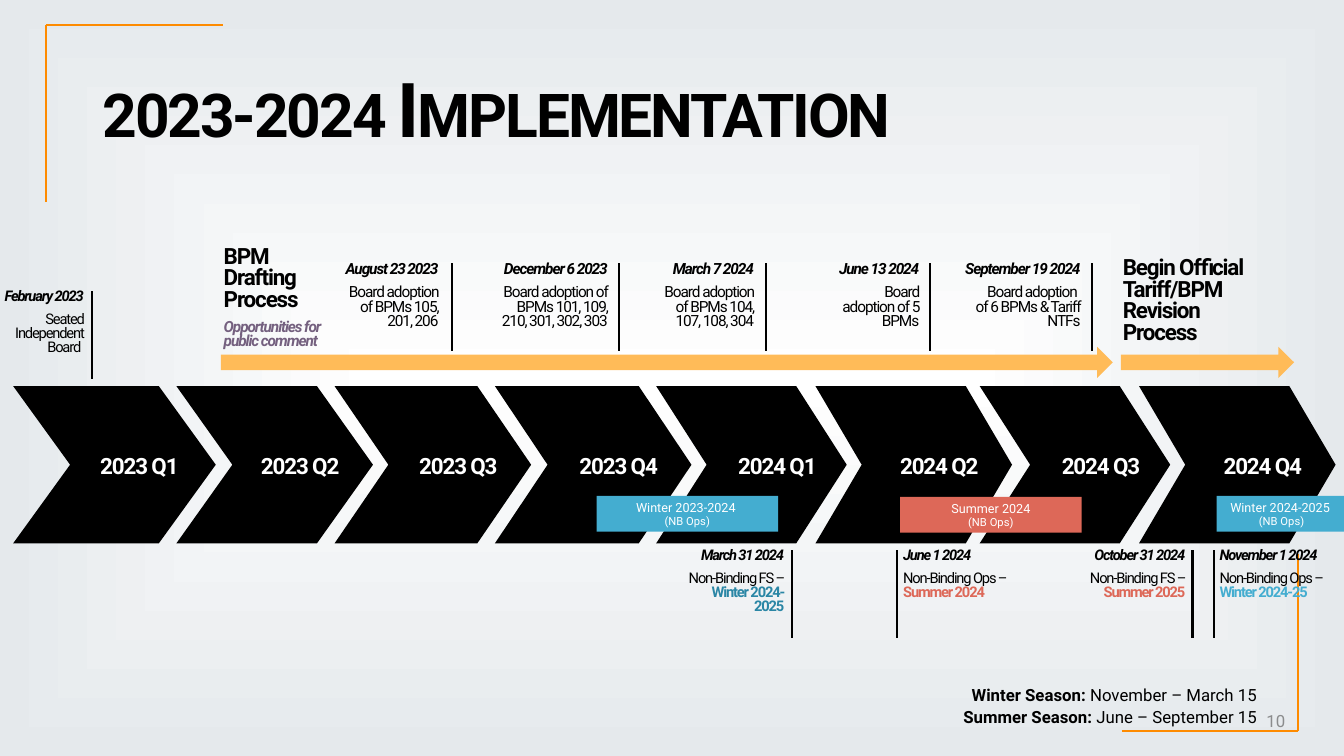
from dataclasses import dataclass, replace

from lxml.etree import SubElement
from pptx import Presentation
from pptx.dml.color import RGBColor
from pptx.enum.shapes import MSO_CONNECTOR, MSO_SHAPE
from pptx.enum.text import MSO_ANCHOR, PP_ALIGN
from pptx.oxml.ns import qn
from pptx.shapes.autoshape import Shape
from pptx.slide import Slide
from pptx.text.text import TextFrame
from pptx.util import Pt

INK = {
    "black": "000000", "white": "FFFFFF", "edge": "E5E9EC", "frame": "FE8B00",
    "amber": "FFBB58", "red": "DD6858", "blue": "44ADD0", "teal": "2A86A5",
    "plum": "74607F", "grey": "8B8C8D",
}
LEFT, RIGHT, MID = PP_ALIGN.LEFT, PP_ALIGN.RIGHT, PP_ALIGN.CENTER


@dataclass(frozen=True)
class Run:
    text: str
    size: float
    ink: str = "black"
    bold: bool = False
    slant: bool = False
    track: float = 0
    small: bool = False


@dataclass(frozen=True)
class Box:
    x: float
    y: float
    w: float
    h: float


@dataclass(frozen=True)
class Style:
    align: PP_ALIGN = LEFT
    lead: float = 0.8
    gap: float = 6
    inset: float = 2.16
    anchor: MSO_ANCHOR = MSO_ANCHOR.TOP


@dataclass(frozen=True)
class Quarter:
    name: str
    x: float
    w: float
    notch: float


@dataclass(frozen=True)
class Event:
    """A dated note beside an upright bar."""
    x: float
    y: float
    w: float
    bar: float
    date: str
    note: str
    size: float = 10.5
    align: PP_ALIGN = RIGHT
    season: str = ""
    ink: str = "black"


@dataclass(frozen=True)
class Season:
    name: str
    x: float
    y: float
    w: float
    ink: str


HEAD = Run("", 16, bold=True, track=-0.8)
UPPER, LOWER = 185.2, 390.2
CHEVRON_TOP, CHEVRON_H, LABEL_H = 275.8, 112.3, 24.5

QUARTERS = [
    Quarter("2023 Q1", 9.4, 144.7, 0.362),
    Quarter("2023 Q2", 126, 140.4, 0.356),
    Quarter("2023 Q3", 239, 140.4, 0.342),
    Quarter("2023 Q4", 353.5, 140.4, 0.335),
    Quarter("2024 Q1", 468.7, 136.1, 0.321),
    Quarter("2024 Q2", 582.5, 140.4, 0.294),
    Quarter("2024 Q3", 699.8, 136.1, 0.321),
    Quarter("2024 Q4", 813.6, 140.4, 0.294),
]
SEASONS = [
    Season("Winter 2023-2024 ", 426.2, 354.2, 129.6, "blue"),
    Season("Summer 2024", 643, 355, 129.6, "red"),
    Season("Winter 2024-2025 ", 869, 354.2, 92.9, "blue"),
]
EVENTS = [
    Event(-12.2, 205.2, 74.2, 65.5, "February 2023", "Seated Independent Board "),
    Event(241.2, UPPER, 74.2, 322.6, "August 23 2023",
          "Board adoption of BPMs 105, 201, 206", 11),
    Event(349.2, UPPER, 87.1, 442.1, "December 6 2023",
          "Board adoption of BPMs 101, 109, 210, 301, 302, 303", 11),
    Event(466.6, UPPER, 74.2, 547.2, "March 7 2024",
          "Board adoption of BPMs 104, 107, 108, 304", 11),
    Event(592.6, UPPER, 66.2, 664.6, "June 13 2024", "Board adoption of 5 BPMs", 11),
    Event(679, UPPER, 95, 779.8, "September 19 2024",
          "Board adoption \nof 6 BPMs & Tariff NTFs", 11),
    Event(488.9, LOWER, 73.4, 565.9, "March 31 2024", "Non-Binding FS – ",
          season="Winter 2024-2025", ink="teal"),
    Event(643, LOWER, 88.6, 640.8, "June 1 2024", "Non-Binding Ops – ",
          align=LEFT, season="Summer 2024", ink="red"),
    Event(773.3, LOWER, 75.6, 851.8, "October 31 2024", "Non-Binding FS – ",
          season="Summer 2025", ink="red"),
    Event(869, LOWER, 88.6, 866.9, "November 1 2024", "Non-Binding Ops – ",
          align=LEFT, season="Winter 2024-25", ink="blue"),
]
FRAME = [
    (33.1, 18, 33.1, 144), (159.1, 18, 33.1, 18),
    (927.4, 522, 927.4, 396), (801.4, 522, 927.4, 522),
]


def tint(name: str) -> RGBColor:
    return RGBColor.from_string(INK[name])


def write(frame: TextFrame, paras: list[list[Run]], style: Style) -> None:
    frame.word_wrap = True
    frame.vertical_anchor = style.anchor
    for n, runs in enumerate(paras):
        para = frame.paragraphs[0] if n == 0 else frame.add_paragraph()
        para.alignment = style.align
        para.line_spacing = style.lead
        para.space_before = Pt(style.gap if n else 0)
        for item in runs:
            for k, line in enumerate(item.text.split("\n")):
                if k:
                    para.add_line_break()
                run = para.add_run()
                run.text = line
                font = run.font
                font.name, font.size = "Roboto", Pt(item.size)
                font.bold, font.italic = item.bold, item.slant
                font.color.rgb = tint(item.ink)
                props = run._r.get_or_add_rPr()
                if item.track:
                    props.set("spc", str(round(item.track * 100)))
                if item.small:
                    props.set("cap", "small")


def add_text(slide: Slide, box: Box, paras: list[list[Run]], style: Style) -> None:
    frame = slide.shapes.add_textbox(Pt(box.x), Pt(box.y), Pt(box.w), Pt(box.h)).text_frame
    frame.margin_left = frame.margin_right = Pt(style.inset)
    frame.margin_top = frame.margin_bottom = Pt(style.inset)
    write(frame, paras, style)


def add_form(slide: Slide, kind: MSO_SHAPE, box: Box, ink: str) -> Shape:
    form = slide.shapes.add_shape(kind, Pt(box.x), Pt(box.y), Pt(box.w), Pt(box.h))
    form.shadow.inherit = False
    form.fill.solid()
    form.fill.fore_color.rgb = tint(ink)
    form.line.fill.background()
    return form


def add_line(slide: Slide, x1: float, y1: float, x2: float, y2: float, ink: str) -> None:
    line = slide.shapes.add_connector(MSO_CONNECTOR.STRAIGHT, Pt(x1), Pt(y1), Pt(x2), Pt(y2))
    line.line.color.rgb = tint(ink)
    line.line.width = Pt(1.5)
    SubElement(line.element.spPr, qn("a:effectLst"))


def add_glow(slide: Slide) -> None:
    """Fill the background with a gradient from the centre outward."""
    fill = slide.background.fill
    fill.gradient()
    for stop, ink in zip(fill.gradient_stops, ("white", "edge")):
        stop.color.rgb = tint(ink)
    grad = next(slide.element.iter(qn("a:gradFill")))
    grad.remove(grad.find(qn("a:lin")))
    shade = SubElement(grad, qn("a:path"), {"path": "shape"})
    SubElement(shade, qn("a:fillToRect"), dict.fromkeys("ltrb", "50000"))


def add_quarter(slide: Slide, item: Quarter) -> None:
    box = Box(item.x, CHEVRON_TOP, item.w, CHEVRON_H)
    add_form(slide, MSO_SHAPE.CHEVRON, box, "black").adjustments[0] = item.notch
    label = Box(item.x + 0.415 * item.w, 321.8, 0.617 * item.w, LABEL_H)
    add_text(slide, label, [[replace(HEAD, text=item.name, ink="white")]],
             Style(anchor=MSO_ANCHOR.MIDDLE))


def add_season(slide: Slide, item: Season) -> None:
    form = add_form(slide, MSO_SHAPE.RECTANGLE, Box(item.x, item.y, item.w, 25.5), item.ink)
    write(form.text_frame, [[Run(item.name, 9, "white")], [Run("(NB Ops)", 8, "white")]],
          Style(MID, 1, 0, anchor=MSO_ANCHOR.MIDDLE))


def add_event(slide: Slide, item: Event) -> None:
    note = Run(item.note, item.size, track=-0.8)
    date = replace(note, text=item.date, bold=True, slant=True)
    body = [note]
    if item.season:
        body.append(replace(note, text=item.season, ink=item.ink, bold=True))
    add_text(slide, Box(item.x, item.y, item.w, 58), [[date], body], Style(item.align))
    top = item.y + 2.9
    add_line(slide, item.bar, top, item.bar, top + 62.6, "black")


def main() -> None:
    deck = Presentation()
    deck.slide_width, deck.slide_height = Pt(960), Pt(540)
    slide = deck.slides.add_slide(deck.slide_layouts[6])
    add_glow(slide)
    for ends in FRAME:
        add_line(slide, *ends, "frame")

    title = Run("2023-2024 Implementation", 54, bold=True, track=-1.5, small=True)
    add_text(slide, Box(66.2, 28.8, 828, 104.4), [[title]],
             Style(lead=0.9, inset=7.2, anchor=MSO_ANCHOR.MIDDLE))
    add_text(slide, Box(880.6, 500.4, 44.6, 28.8), [[Run("10", 12, "grey")]],
             Style(RIGHT, 1, inset=7.2, anchor=MSO_ANCHOR.MIDDLE))

    base = Style(anchor=MSO_ANCHOR.BOTTOM)
    chance = replace(HEAD, text="Opportunities for public comment", size=11,
                     ink="plum", slant=True)
    add_text(slide, Box(157.7, 157.7, 74.2, 94.3),
             [[replace(HEAD, text="BPM Drafting Process")], [chance]], base)
    add_text(slide, Box(799.9, 192.2, 115.9, 56.2),
             [[replace(HEAD, text="Begin Official Tariff/BPM Revision Process")]], base)
    for x, w in ((157.7, 637.2), (800.6, 123.8)):
        add_form(slide, MSO_SHAPE.RIGHT_ARROW, Box(x, 247.7, w, 22.3), "amber")

    for quarter in QUARTERS:
        add_quarter(slide, quarter)
    for season in SEASONS:
        add_season(slide, season)
    for event in EVENTS:
        add_event(slide, event)

    spans = (("Winter Season:", " November – March 15"),
             ("Summer Season:", " June – September 15"))
    add_text(slide, Box(265.7, 487.4, 632.9, 33.1),
             [[Run(name, 12, bold=True), Run(span, 12)] for name, span in spans],
             Style(RIGHT, 1.07, 0, 0.72))
    deck.save("out.pptx")


if __name__ == "__main__":
    main()
